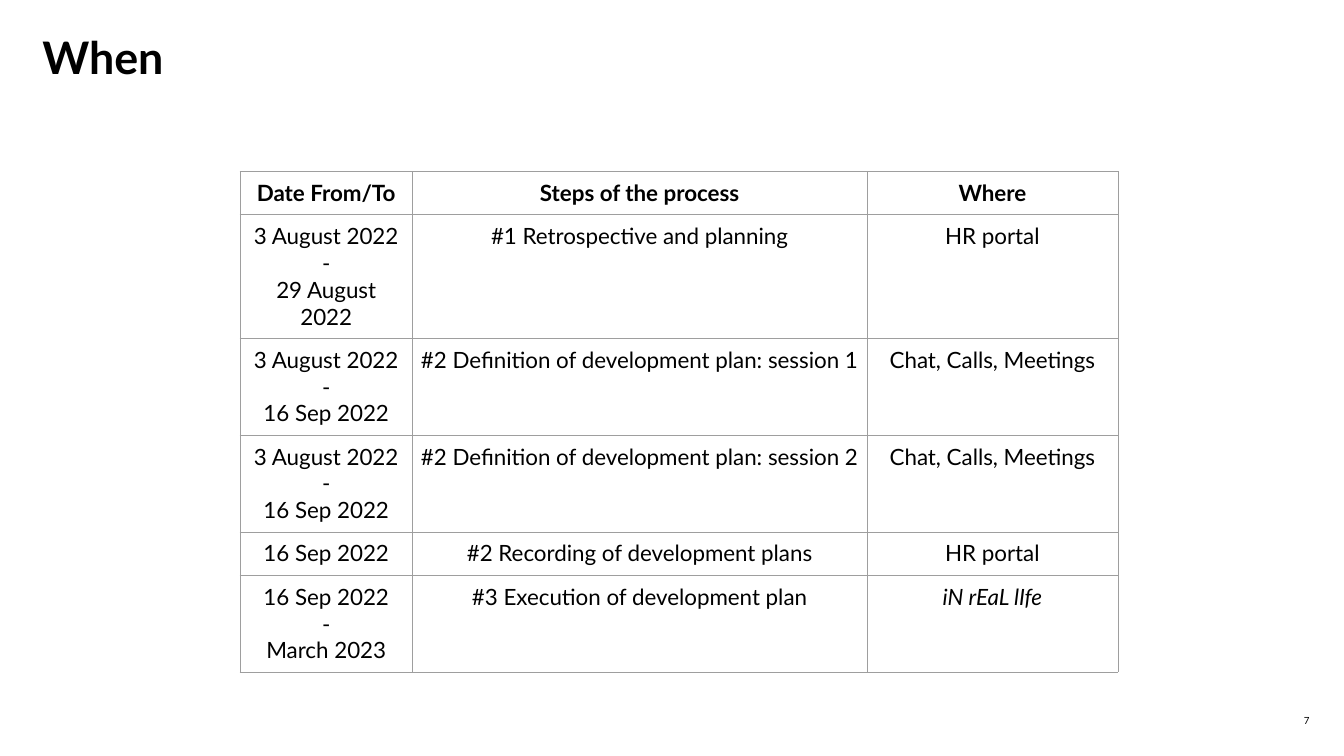
from dataclasses import dataclass

from lxml.etree import SubElement
from pptx import Presentation
from pptx.dml.color import RGBColor
from pptx.enum.text import MSO_ANCHOR, PP_ALIGN as Align
from pptx.oxml.ns import qn
from pptx.util import Pt

FONT = "Lato"
BLACK = "000000"
BORDER = "9E9E9E"
INSET = Pt(5.76)
COLUMN_WIDTHS = (123.1, 324.7, 179.3)
LINE_HEIGHT = 10.8


@dataclass
class Label:
    text: str
    left: float
    top: float
    width: float
    height: float
    size: float
    bold: bool = False
    align: Align = Align.LEFT
    wrap: bool = True


@dataclass
class Step:
    dates: str
    name: str
    place: str
    bold: bool = False
    italic_place: bool = False


LABELS = [
    Label("When", 30.2, 20.9, 855.4, 38.9, 32, bold=True),
    Label("7", 924.5, 510.5, 10.8, 7.2, 7, align=Align.RIGHT, wrap=False),
]

STEPS = [
    Step("Date From/To", "Steps of the process", "Where", bold=True),
    Step("3 August 2022\n-\n29 August 2022", "#1 Retrospective and planning", "HR portal"),
    Step("3 August 2022\n-\n16 Sep 2022", "#2 Definition of development plan: session 1",
         "Chat, Calls, Meetings"),
    Step("3 August 2022\n-\n16 Sep 2022", "#2 Definition of development plan: session 2",
         "Chat, Calls, Meetings"),
    Step("16 Sep 2022", "#2 Recording of development plans", "HR portal"),
    Step("16 Sep 2022\n-\nMarch 2023", "#3 Execution of development plan", "iN rEaL lIfe",
         italic_place=True),
]


def color(value: str) -> RGBColor:
    return RGBColor.from_string(value)


def write(tf, text: str, size: float, align: Align, bold: bool = False,
          italic: bool = False) -> None:
    tf.text = text
    for p in tf.paragraphs:
        p.alignment = align
        for r in p.runs:
            r.font.name = FONT
            r.font.size = Pt(size)
            r.font.bold = bold
            r.font.italic = italic
            r.font.color.rgb = color(BLACK)


def add_label(s, label: Label) -> None:
    sp = s.shapes.add_textbox(Pt(label.left), Pt(label.top), Pt(label.width), Pt(label.height))
    tf = sp.text_frame
    tf.margin_left = tf.margin_right = tf.margin_top = tf.margin_bottom = 0
    tf.word_wrap = label.wrap
    write(tf, label.text, label.size, label.align, label.bold)


def add_borders(cell) -> None:
    tc_pr = cell._tc.get_or_add_tcPr()
    for index, side in enumerate(("lnL", "lnR", "lnT", "lnB")):
        ln = SubElement(tc_pr, qn(f"a:{side}"), w=str(Pt(0.6)))
        fill = SubElement(ln, qn("a:solidFill"))
        SubElement(fill, qn("a:srgbClr"), val=BORDER)
        tc_pr.insert(index, ln)


def add_schedule(s, steps: list[Step]) -> None:
    heights = [20.2 + LINE_HEIGHT * len(step.dates.split("\n")) for step in steps]
    frame = s.shapes.add_table(len(steps), len(COLUMN_WIDTHS), Pt(171.5), Pt(122.4),
                               Pt(sum(COLUMN_WIDTHS)), Pt(sum(heights)))
    table = frame.table
    table.first_row = table.horz_banding = False
    for column, width in zip(table.columns, COLUMN_WIDTHS):
        column.width = Pt(width)
    for row, step, height in zip(table.rows, steps, heights):
        row.height = Pt(height)
        for index, text in enumerate((step.dates, step.name, step.place)):
            cell = row.cells[index]
            cell.margin_left = cell.margin_right = INSET
            cell.margin_top = cell.margin_bottom = INSET
            cell.vertical_anchor = MSO_ANCHOR.TOP
            cell.fill.background()
            add_borders(cell)
            write(cell.text_frame, text, 16, Align.CENTER, step.bold,
                  step.italic_place and index == 2)


def main() -> None:
    prs = Presentation()
    prs.slide_width, prs.slide_height = Pt(960), Pt(540)
    s = prs.slides.add_slide(prs.slide_layouts[6])
    for label in LABELS:
        add_label(s, label)
    add_schedule(s, STEPS)
    prs.save("out.pptx")


if __name__ == "__main__":
    main()
